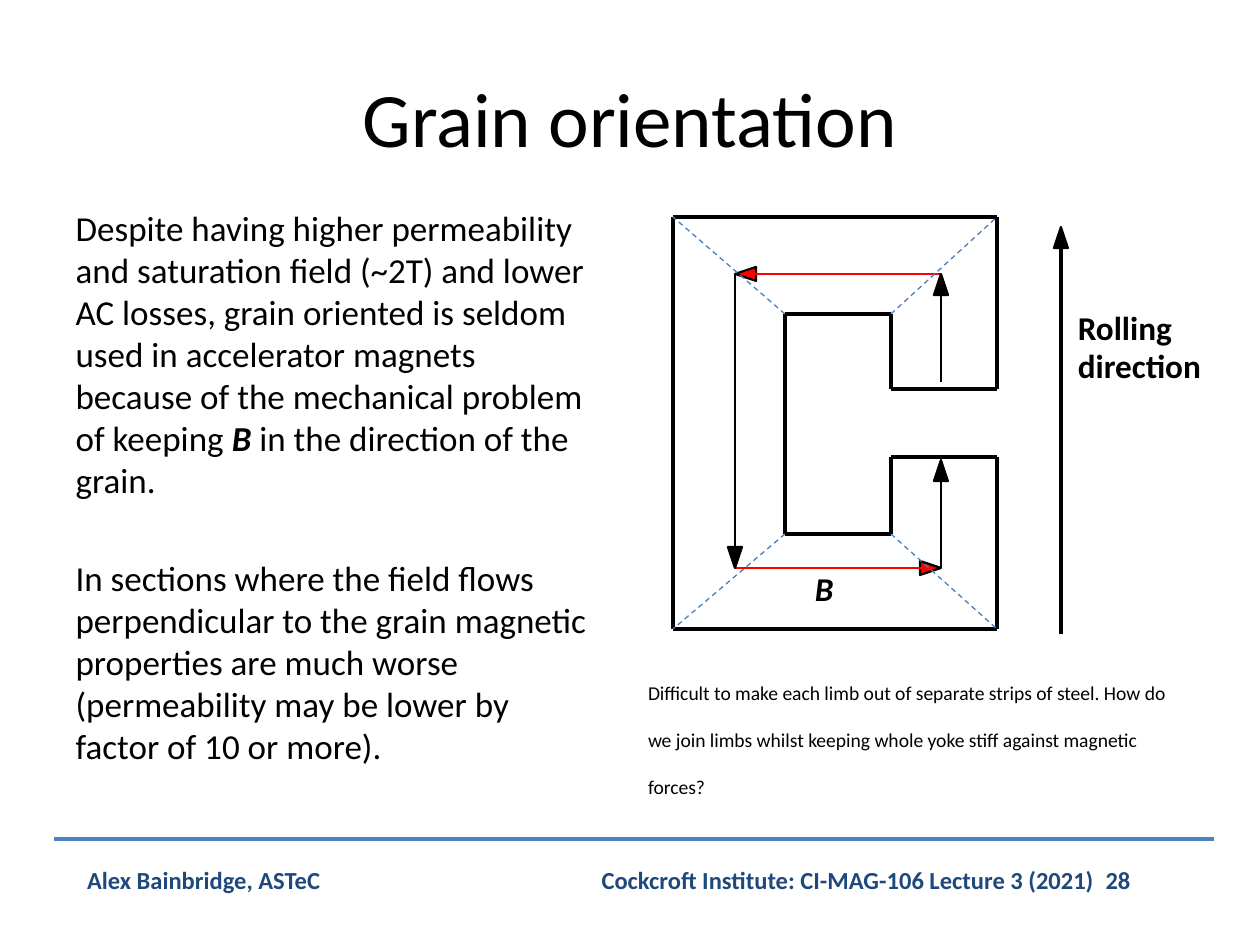
from dataclasses import dataclass
from itertools import pairwise

from lxml import etree
from pptx import Presentation, util as u
from pptx.dml.color import RGBColor
from pptx.enum import dml, shapes, text
from pptx.oxml import ns

PX = 914400 / 126  # EMU in one px


@dataclass(frozen=True)
class Theme:
    font: str = "Calibri"
    black: str = "000000"
    red: str = "FF0000"
    navy: str = "1F497D"
    rule: str = "4F81BD"
    joint: str = "4B7EBC"
    title: float = 44
    body: float = 20
    label: float = 19
    footer: float = 14
    caption: float = 11.2
    thick: float = 2.5
    thin: float = 1.25


@dataclass(frozen=True)
class Arrow:
    tail: tuple[int, int]
    tip: tuple[int, int]
    color: str
    width: float


@dataclass(frozen=True)
class Label:
    text: str
    box: tuple[int, int, int, int]
    size: float
    color: str = "000000"
    bold: bool = True
    italic: bool = False
    align: text.PP_ALIGN = text.PP_ALIGN.LEFT
    inset: tuple[int, int] = (0, 0)
    wrap: bool = False
    spacing: float = 1.0


T = Theme()


def emu(px: float) -> int:
    return round(px * PX)


def write(p, words: str, *, size: float, color: str = T.black,
          bold: bool = False, italic: bool = False) -> None:
    r = p.add_run()
    r.text = words
    r.font.name, r.font.size = T.font, u.Pt(size)
    r.font.bold, r.font.italic = bold, italic
    r.font.color.rgb = RGBColor.from_string(color)


def place(sp, box: tuple[int, int, int, int]) -> None:
    sp.left, sp.top, sp.width, sp.height = map(emu, box)


def add_label(s, label: Label) -> None:
    tf = s.shapes.add_textbox(*map(emu, label.box)).text_frame
    tf.word_wrap = label.wrap
    tf.margin_left = tf.margin_right = emu(label.inset[0])
    tf.margin_top = tf.margin_bottom = emu(label.inset[1])
    p = tf.paragraphs[0]
    p.alignment, p.line_spacing = label.align, label.spacing
    write(p, label.text, size=label.size, color=label.color,
          bold=label.bold, italic=label.italic)


def add_line(s, start: tuple[int, int], end: tuple[int, int], color: str,
             width: float, dashed: bool = False) -> None:
    sp = s.shapes.add_connector(shapes.MSO_CONNECTOR.STRAIGHT,
                                *map(emu, (*start, *end)))
    sp.line.color.rgb = RGBColor.from_string(color)
    sp.line.width = u.Pt(width)
    if dashed:
        sp.line.dash_style = dml.MSO_LINE.DASH
    etree.SubElement(sp._element.spPr, ns.qn("a:effectLst"))


def add_arrow(s, arrow: Arrow, length: int = 21, half: int = 7) -> None:
    (x0, y0), (x, y) = arrow.tail, arrow.tip
    dx, dy = (x > x0) - (x < x0), (y > y0) - (y < y0)
    bx, by = x - dx * length, y - dy * length
    path = s.shapes.build_freeform(x, y, scale=PX)
    path.add_line_segments([(bx - dy * half, by + dx * half),
                            (bx + dy * half, by - dx * half)], close=True)
    head = path.convert_to_shape()
    head.shadow.inherit = False
    head.fill.solid()
    head.fill.fore_color.rgb = RGBColor.from_string(arrow.color)
    head.line.color.rgb = RGBColor.from_string(T.black)
    head.line.width = u.Pt(T.thin)
    add_line(s, arrow.tail, (x - dx * 18, y - dy * 18), arrow.color, arrow.width)


def add_text(s) -> None:
    # Title
    title = s.shapes.title
    place(title, (63, 38, 1134, 157))
    tf = title.text_frame
    tf.vertical_anchor = text.MSO_ANCHOR.MIDDLE
    tf.paragraphs[0].alignment = text.PP_ALIGN.CENTER
    write(tf.paragraphs[0], "Grain orientation", size=T.title)

    # Body: runs alternate between plain and bold italic
    body = s.placeholders[1]
    place(body, (63, 200, 547, 624))
    tf = body.text_frame
    tf.auto_size = text.MSO_AUTO_SIZE.NONE
    paragraphs = [
        ["Despite having higher permeability and saturation field (~2T) and "
         "lower AC losses, grain oriented is seldom used in accelerator "
         "magnets because of the mechanical problem of keeping ",
         "B ", "in the direction of the grain."],
        ["In sections where the field flows perpendicular to the grain "
         "magnetic properties are much worse (permeability may be lower by "
         "factor of 10 or more)."],
    ]
    for i, runs in enumerate(paragraphs):
        p = tf.add_paragraph() if i else tf.paragraphs[0]
        pPr = p._p.get_or_add_pPr()
        pPr.set("marL", "0")
        pPr.set("indent", "0")
        etree.SubElement(pPr, ns.qn("a:buNone"))
        p.space_before = u.Pt(32 if i else 0)
        for j, words in enumerate(runs):
            write(p, words, size=T.body, bold=j % 2 == 1, italic=j % 2 == 1)

    # Caption
    add_label(s, Label(
        "Difficult to make each limb out of separate strips of steel. How do "
        "we join limbs whilst keeping whole yoke stiff against magnetic forces?",
        (635, 651, 546, 183), T.caption, bold=False, inset=(13, 6), wrap=True,
        spacing=2.0))


def add_yoke(s) -> None:
    left, right, top, bottom = 673, 997, 217, 629
    in_left, in_right, in_top, in_bottom = 785, 891, 314, 534
    gap_top, gap_bottom = 389, 457

    # C-shaped outline
    outline = [(left, top), (right, top), (right, gap_top), (in_right, gap_top),
               (in_right, in_top), (in_left, in_top), (in_left, in_bottom),
               (in_right, in_bottom), (in_right, gap_bottom),
               (right, gap_bottom), (right, bottom), (left, bottom)]
    for start, end in pairwise(outline + outline[:1]):
        add_line(s, start, end, T.black, T.thick)

    # Field path and rolling direction
    west, east, north, south = 735, 941, 274, 568
    for arrow in (
        Arrow((east, north), (west, north), T.red, T.thin),
        Arrow((west, south), (east, south), T.red, T.thin),
        Arrow((west, north), (west, south), T.black, T.thin),
        Arrow((east, south), (east, 460), T.black, T.thin),
        Arrow((east, 382), (east, north), T.black, T.thin),
        Arrow((1061, 634), (1061, 227), T.black, T.thick),
    ):
        add_arrow(s, arrow)

    add_label(s, Label("B", (815, 568, 19, 40), T.label, italic=True))
    add_label(s, Label("Rolling", (1078, 307, 102, 40), T.label))
    add_label(s, Label("direction", (1078, 345, 125, 40), T.label))

    # Mitred corner joints
    for x, in_x in ((left, in_left), (right, in_right)):
        for y, in_y in ((top, in_top), (bottom, in_bottom)):
            add_line(s, (in_x, in_y), (x, y), T.joint, 0.75, dashed=True)


def add_footer(s) -> None:
    add_line(s, (54, 839), (1214, 839), T.rule, 2)
    add_label(s, Label("Alex Bainbridge, ASTeC", (74, 859, 486, 43), T.footer,
                       T.navy, inset=(13, 6), wrap=True))
    add_label(s, Label("Cockcroft Institute: CI-MAG-106 Lecture 3 (2021)\t28",
                       (517, 859, 698, 43), T.footer, T.navy,
                       align=text.PP_ALIGN.CENTER, inset=(13, 6), wrap=True))


def main() -> None:
    prs = Presentation()
    prs.slide_width, prs.slide_height = u.Inches(10), u.Inches(7.5)
    s = prs.slides.add_slide(prs.slide_layouts[1])
    add_footer(s)
    add_yoke(s)
    add_text(s)
    prs.save("out.pptx")


if __name__ == "__main__":
    main()
